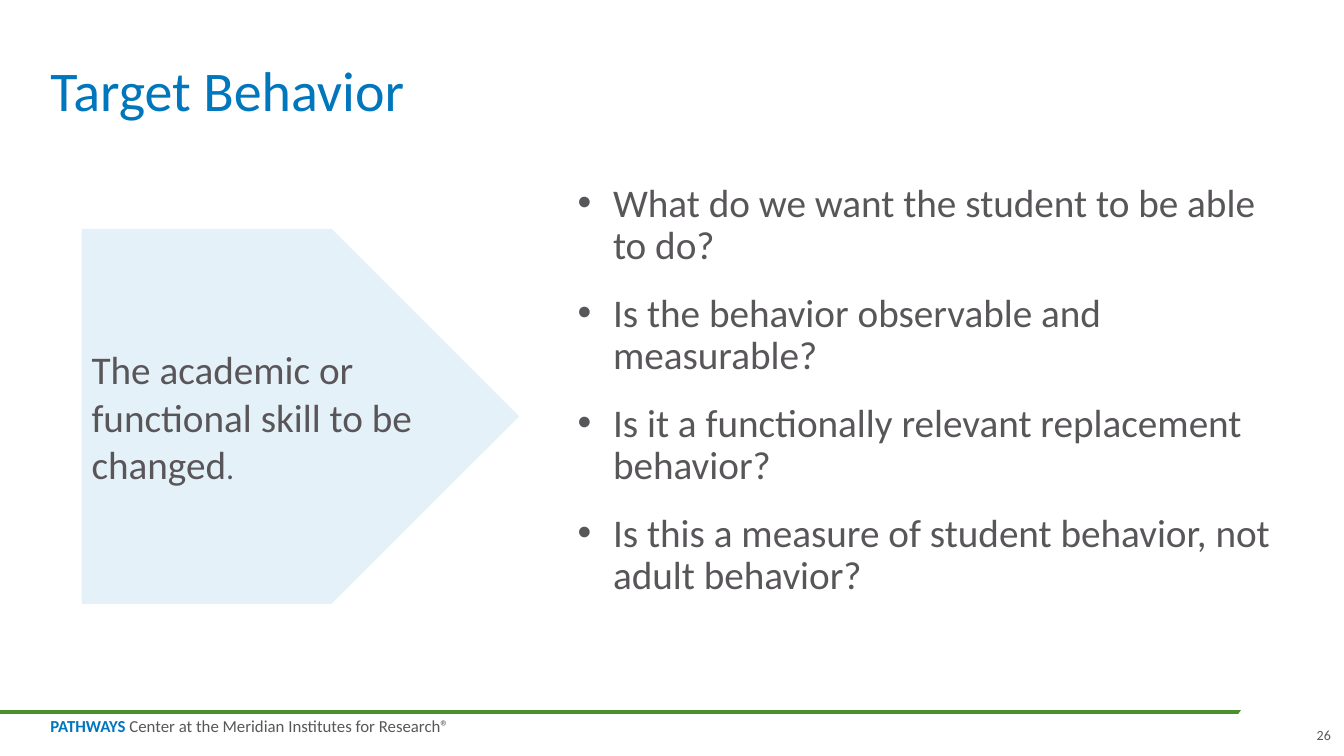
"""Build the Target Behavior slide."""
import pptx
import pptx.dml.color
import pptx.enum.shapes
import pptx.enum.text
import pptx.oxml
import pptx.oxml.ns
import pptx.util

Inches = pptx.util.Inches
Pt = pptx.util.Pt
RGBColor = pptx.dml.color.RGBColor
Shapes = pptx.enum.shapes.MSO_SHAPE
Align = pptx.enum.text.PP_ALIGN
Anchor = pptx.enum.text.MSO_ANCHOR

BLUE = RGBColor(0x00, 0x76, 0xBD)
GRAY = RGBColor(0x59, 0x56, 0x5A)
GREEN = RGBColor(0x4C, 0x90, 0x2D)
PALE_BLUE = RGBColor(0xE5, 0xF1, 0xF8)
WHITE = RGBColor(0xFF, 0xFF, 0xFF)

QUESTIONS = [
    "What do we want the student to be able to do?",
    "Is the behavior observable and measurable?",
    "Is it a functionally relevant replacement behavior?",
    "Is this a measure of student behavior, not adult behavior?",
]


def apply(target, values):
    for name, value in values.items():
        setattr(target, name, value)


class SlideBuilder:
    def __init__(self, presentation):
        self.slide = presentation.slides.add_slide(presentation.slide_layouts[1])
        self.font = "Calibri"
        self.no_margins = dict.fromkeys(
            ("margin_left", "margin_top", "margin_right", "margin_bottom"), 0)

    def place(self, shape, left, top, width, height):
        apply(shape, {"left": Inches(left), "top": Inches(top),
                      "width": Inches(width), "height": Inches(height)})

    def frame(self, shape, anchor, wrap=True):
        apply(shape.text_frame, {
            **self.no_margins, "word_wrap": wrap, "vertical_anchor": anchor,
            "auto_size": pptx.enum.text.MSO_AUTO_SIZE.NONE})
        return shape.text_frame

    def add_runs(self, paragraph, runs, **layout):
        apply(paragraph, {"alignment": Align.LEFT, "space_before": Pt(0), **layout})
        for text, size, color, bold in runs:
            run = paragraph.add_run()
            run.text = text
            apply(run.font, {"name": self.font, "size": Pt(size), "bold": bold})
            run.font.color.rgb = color

    def title(self, text, *box):
        shape = self.slide.shapes.title
        self.place(shape, *box)
        frame = self.frame(shape, Anchor.BOTTOM)
        self.add_runs(frame.paragraphs[0], [(text, 40, BLUE, False)], line_spacing=0.9)

    def bullets(self, items, *box):
        shape = self.slide.placeholders[1]
        self.place(shape, *box)
        frame = self.frame(shape, Anchor.TOP)
        for index, item in enumerate(items):
            paragraph = frame.paragraphs[0] if index == 0 else frame.add_paragraph()
            self.bullet(paragraph)
            self.add_runs(paragraph, [(item, 28, GRAY, False)], line_spacing=0.9,
                          space_before=Pt(18 if index else 0))

    def bullet(self, paragraph):
        properties = paragraph._p.get_or_add_pPr()
        properties.set("marL", str(Inches(0.35)))
        properties.set("indent", str(Inches(-0.35)))
        namespace = pptx.oxml.ns.nsdecls("a")
        for markup in (f'<a:buClr {namespace}><a:srgbClr val="{GRAY}"/></a:buClr>',
                       f'<a:buFont {namespace} typeface="Arial"/>',
                       f'<a:buChar {namespace} char="•"/>'):
            properties.append(pptx.oxml.parse_xml(markup))

    def shape(self, kind, color, *box, rotation=0):
        shape = self.slide.shapes.add_shape(kind, *map(Inches, box))
        shape.shadow.inherit = False
        shape.fill.solid()
        shape.fill.fore_color.rgb = color
        shape.line.fill.background()
        shape.rotation = rotation
        return shape

    def callout(self, runs, *box):
        shape = self.shape(Shapes.PENTAGON, PALE_BLUE, *box)
        apply(shape.text_frame, {"word_wrap": True, "vertical_anchor": Anchor.MIDDLE})
        self.add_runs(shape.text_frame.paragraphs[0], runs)

    def label(self, runs, *box, anchor=Anchor.TOP, **layout):
        shape = self.slide.shapes.add_textbox(*map(Inches, box))
        frame = self.frame(shape, anchor, wrap=False)
        self.add_runs(frame.paragraphs[0], runs, **layout)

    def rule(self, left, right, top):
        connector = self.slide.shapes.add_connector(
            pptx.enum.shapes.MSO_CONNECTOR.STRAIGHT,
            Inches(left), Inches(top), Inches(right), Inches(top))
        connector.line.color.rgb = GREEN
        connector.line.width = Pt(3)
        connector._element.spPr.append(pptx.oxml.parse_xml(
            f'<a:effectLst {pptx.oxml.ns.nsdecls("a")}/>'))


def main():
    presentation = pptx.Presentation()
    apply(presentation, {"slide_width": Inches(13.33), "slide_height": Inches(7.5)})
    builder = SlideBuilder(presentation)
    builder.rule(0, 13, 7.06)
    builder.shape(Shapes.OVAL, WHITE, 12.16, 6.77, 1.19, 0.58, rotation=332.1)
    builder.label([("PATHWAYS", 12, BLUE, True),
                   (" Center at the Meridian Institutes for Research®", 12, GRAY, False)],
                  0.5, 7.13, 4.02, 0.17, line_spacing=0.85)
    builder.title("Target Behavior", 0.5, 0, 12.4, 1.23)
    builder.callout([("The academic or functional skill to be changed", 28, GRAY, False),
                     (".", 23, GRAY, False)], 0.81, 2.27, 4.34, 3.72)
    builder.bullets(QUESTIONS, 5.73, 1.82, 7.03, 4.42)
    builder.label([("26", 10, GRAY, False)], 13.03, 7.2, 0.17, 0.17,
                  anchor=Anchor.BOTTOM, alignment=Align.RIGHT, space_after=Pt(6))
    presentation.save("out.pptx")


if __name__ == "__main__":
    main()
